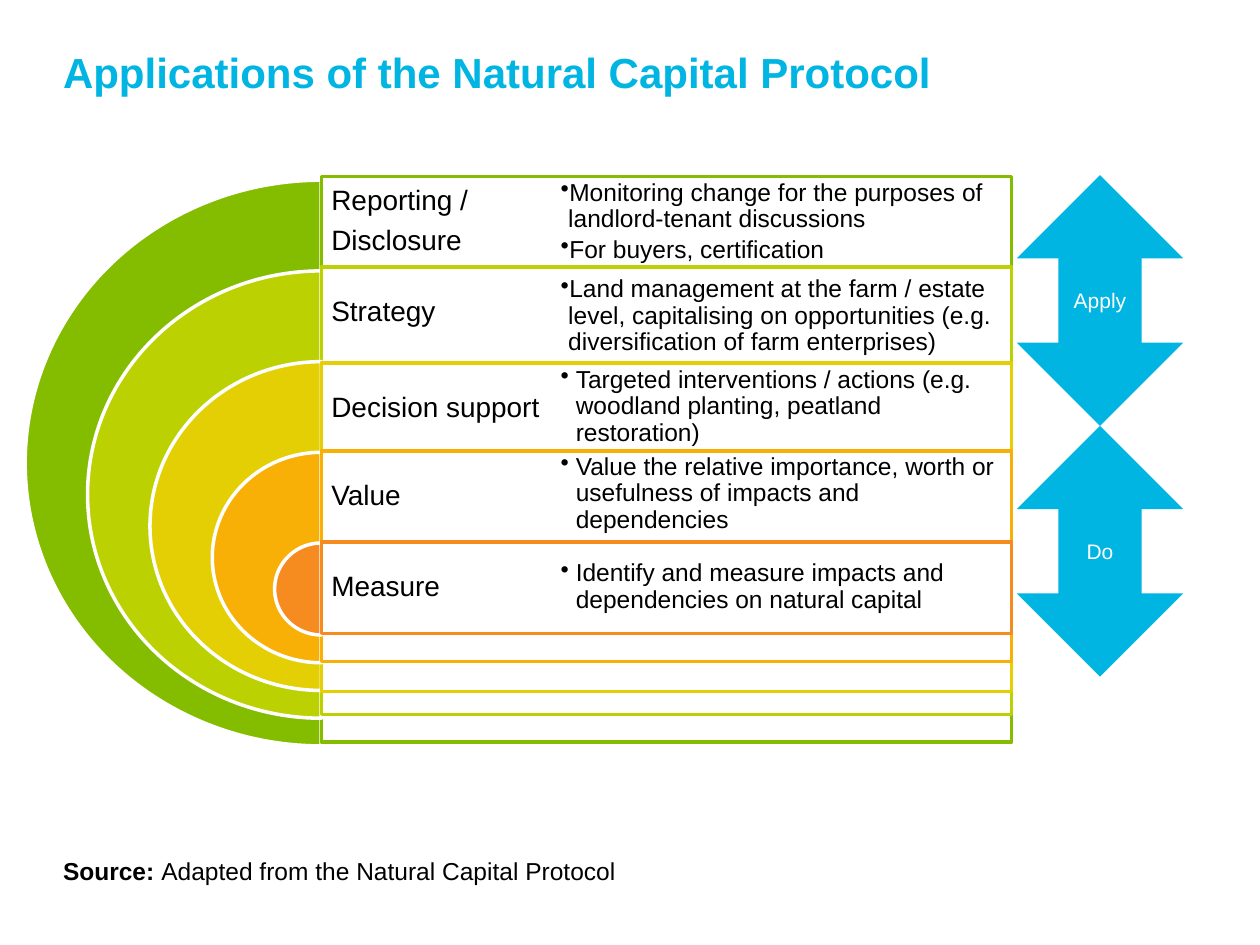
from lxml import etree
from pptx import Presentation
from pptx.dml.color import RGBColor
from pptx.enum.shapes import MSO_SHAPE
from pptx.enum.text import MSO_ANCHOR, MSO_AUTO_SIZE, PP_ALIGN
from pptx.oxml.ns import qn
from pptx.util import Emu, Pt

PX = 9144  # 100 px to the inch

BLUE = RGBColor(0x00, 0xB5, 0xE2)
BLACK = RGBColor(0x00, 0x00, 0x00)
WHITE = RGBColor(0xFF, 0xFF, 0xFF)
GREEN = RGBColor(0x84, 0xBD, 0x00)
LIME = RGBColor(0xBC, 0xD1, 0x02)
YELLOW = RGBColor(0xE4, 0xCF, 0x05)
AMBER = RGBColor(0xF8, 0xB0, 0x07)
ORANGE = RGBColor(0xF6, 0x8B, 0x1F)

ROW_HEIGHT = 72

# colour, panel top, label lines, bullet top, bullet indent, bullets
LAYERS = [
    (GREEN, 140, ["Reporting /", "Disclosure"], 140, 6,
     ["Monitoring change for the purposes of landlord-tenant discussions",
      "For buyers, certification"]),
    (LIME, 212, ["Strategy"], 215, 6,
     ["Land management at the farm / estate level, capitalising on "
      "opportunities (e.g. diversification of farm enterprises)"]),
    (YELLOW, 288, ["Decision support"], 287, 12,
     ["Targeted interventions / actions (e.g. woodland planting, "
      "peatland restoration)"]),
    (AMBER, 358, ["Value"], 356, 12,
     ["Value the relative importance, worth or usefulness of impacts "
      "and dependencies"]),
    (ORANGE, 430, ["Measure"], 430, 12,
     ["Identify and measure impacts and dependencies on natural capital"]),
]


def px(length):
    return Emu(round(length * PX))


def box_of(left, top, width, height):
    return px(left), px(top), px(width), px(height)


def set_font(font, size, color, bold=False):
    font.name = "Arial"
    font.size = Pt(size)
    font.color.rgb = color
    font.bold = bold


def set_frame(frame, insets, anchor):
    frame.word_wrap = True
    frame.auto_size = MSO_AUTO_SIZE.NONE
    frame.vertical_anchor = anchor
    (frame.margin_left, frame.margin_top,
     frame.margin_right, frame.margin_bottom) = map(px, insets)


def add_block(slide, preset, box, fill, line=None):
    shape = slide.shapes.add_shape(preset, *box_of(*box))
    shape.shadow.inherit = False
    shape.fill.solid()
    shape.fill.fore_color.rgb = fill
    if line is None:
        shape.line.fill.background()
    else:
        shape.line.color.rgb = line
        shape.line.width = Pt(2)
    return shape


def write_lines(frame, lines, size, space_after, indent=0):
    frame.text = "\n".join(lines)
    for paragraph in frame.paragraphs:
        if indent:
            properties = paragraph._p.get_or_add_pPr()
            properties.set("marL", str(px(indent)))
            properties.set("indent", str(px(-indent)))
            etree.SubElement(properties, qn("a:buChar"), char="•")
        paragraph.alignment = PP_ALIGN.LEFT
        paragraph.line_spacing = 0.9
        paragraph.space_after = Pt(space_after)
        set_font(paragraph.font, size, BLACK)


def add_title(slide, left, top, width, height):
    title = slide.shapes.title
    title.left, title.top, title.width, title.height = box_of(left, top, width, height)
    set_frame(title.text_frame, (0, 0, 0, 0), MSO_ANCHOR.TOP)
    title.text_frame.text = "Applications of the Natural Capital Protocol"
    paragraph = title.text_frame.paragraphs[0]
    paragraph.alignment = PP_ALIGN.LEFT
    set_font(paragraph.font, 24, BLUE, bold=True)


def add_layers(slide, left, top, width, height):
    center = left + 235
    # Nested half discs, each with its panel to the right
    for index, (color, panel_top, label, *_) in enumerate(LAYERS):
        disc_width = 470 - 99 * index
        layer_height = height - 94 * index
        disc = add_block(slide, MSO_SHAPE.PIE,
                         (center - disc_width / 2, top + 3 + 72 * index,
                          disc_width, layer_height), color, WHITE)
        disc.adjustments[0] = 54
        disc.adjustments[1] = 162

        panel = add_block(slide, MSO_SHAPE.RECTANGLE,
                          (center, top + panel_top - 140, left + width - center,
                           layer_height), WHITE, color)
        fill_color = panel.fill._xPr.find(qn("a:solidFill"))[0]
        etree.SubElement(fill_color, qn("a:alpha"), val="90000")
        set_frame(panel.text_frame, (8, 8, 270, layer_height - ROW_HEIGHT + 8),
                  MSO_ANCHOR.MIDDLE)
        write_lines(panel.text_frame, label, 16, 5.6)

    # Bullet lists over the panels
    for _, _, _, bullet_top, indent, bullets in LAYERS:
        text_box = slide.shapes.add_textbox(
            *box_of(left + 420, top + bullet_top - 140, 367, ROW_HEIGHT))
        set_frame(text_box.text_frame, (5, 5, 5, 5), MSO_ANCHOR.MIDDLE)
        write_lines(text_box.text_frame, bullets, 14, 2.1, indent)


def add_stage_arrows(slide, left, top, width, height):
    arrow_height = height / 2
    for index, stage in enumerate(["Apply", "Do"]):
        arrow = add_block(slide, MSO_SHAPE.UP_DOWN_ARROW,
                          (left, top + index * arrow_height, width, arrow_height), BLUE)
        set_frame(arrow.text_frame, (10, 5, 10, 5), MSO_ANCHOR.MIDDLE)
        arrow.text_frame.text = stage
        paragraph = arrow.text_frame.paragraphs[0]
        paragraph.alignment = PP_ALIGN.CENTER
        set_font(paragraph.font, 12, WHITE)


def add_source(slide, left, top, width, height):
    text_box = slide.shapes.add_textbox(*box_of(left, top, width, height))
    set_frame(text_box.text_frame, (0, 0, 0, 0), MSO_ANCHOR.TOP)
    paragraph = text_box.text_frame.paragraphs[0]
    for text, bold in [("Source: ", True),
                       ("Adapted from the Natural Capital Protocol", False)]:
        run = paragraph.add_run()
        run.text = text
        set_font(run.font, 14, BLACK, bold)


def main():
    presentation = Presentation()
    presentation.slide_width, presentation.slide_height = px(1000), px(750)
    slide = presentation.slides.add_slide(presentation.slide_layouts[5])
    add_title(slide, 50, 37, 900, 88)
    add_layers(slide, 20, 140, 783, 449)
    add_stage_arrows(slide, 807, 139, 132, 398)
    add_source(slide, 50, 679, 769, 45)
    presentation.save("out.pptx")


if __name__ == "__main__":
    main()
